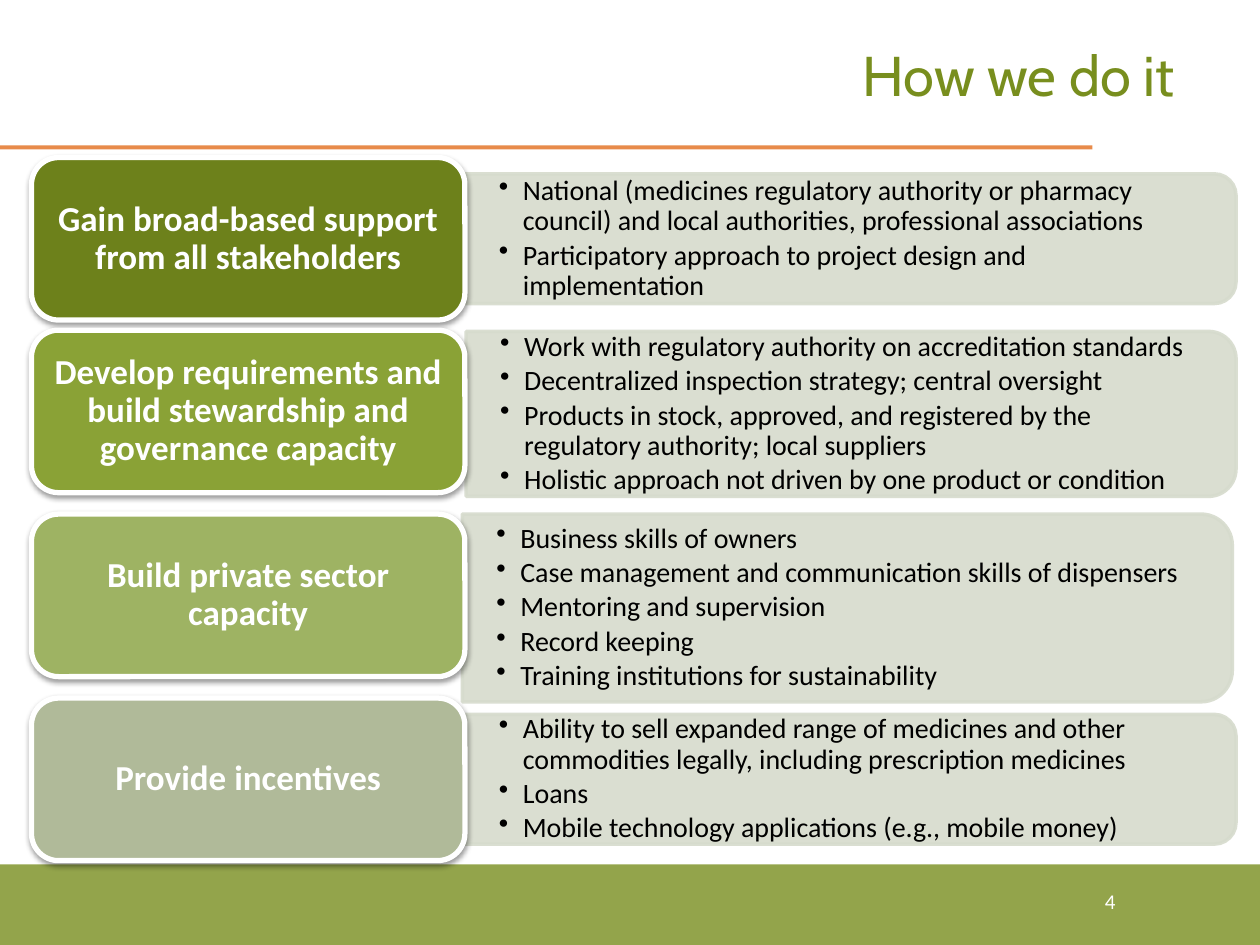
"""Builds the "How we do it" slide: four labelled steps with bullet panels."""
from lxml import etree
from pptx import Presentation
from pptx.dml.color import RGBColor
from pptx.enum.shapes import MSO_CONNECTOR, MSO_SHAPE
from pptx.enum.text import MSO_ANCHOR, PP_ALIGN
from pptx.oxml.ns import qn
from pptx.util import Inches, Pt

RECT, ROUND = MSO_SHAPE.RECTANGLE, MSO_SHAPE.ROUNDED_RECTANGLE
ROUND_TOP = MSO_SHAPE.ROUND_2_SAME_RECTANGLE
STRAIGHT = MSO_CONNECTOR.STRAIGHT
LEFT, CENTER, RIGHT = PP_ALIGN.LEFT, PP_ALIGN.CENTER, PP_ALIGN.RIGHT
MIDDLE = MSO_ANCHOR.MIDDLE

GREEN = RGBColor(0x78, 0x8E, 0x1E)
ORANGE = RGBColor(0xE3, 0x6F, 0x1E)
PANEL = RGBColor(0xD6, 0xDB, 0xCD)
WHITE = RGBColor(0xFF, 0xFF, 0xFF)
BLACK = RGBColor(0, 0, 0)

TITLE = "How we do it"
PAGE = "4"
STEPS = [
    {"label": "Gain broad-based support from all stakeholders",
     "color": RGBColor(0x6D, 0x81, 0x1B), "top": 1.25,
     "panel": (3.69, 1.38, 6.12, 1.03),
     "bullets": ["National (medicines regulatory authority or pharmacy council) "
                 "and local authorities, professional associations",
                 "Participatory approach to project design and implementation"]},
    {"label": "Develop requirements and build stewardship and governance capacity",
     "color": RGBColor(0x8A, 0xA2, 0x36), "top": 2.62,
     "panel": (3.7, 2.63, 6.11, 1.31),
     "bullets": ["Work with regulatory authority on accreditation standards",
                 "Decentralized inspection strategy; central oversight",
                 "Products in stock, approved, and registered by the "
                 "regulatory authority; local suppliers",
                 "Holistic approach not driven by one product or condition"]},
    {"label": "Build private sector capacity",
     "color": RGBColor(0x9E, 0xB3, 0x63), "top": 4.08,
     "panel": (3.67, 4.08, 6.11, 1.49),
     "bullets": ["Business skills of owners",
                 "Case management and communication skills of dispensers",
                 "Mentoring and supervision",
                 "Record keeping",
                 "Training institutions for sustainability"]},
    {"label": "Provide incentives",
     "color": RGBColor(0xB0, 0xBA, 0x99), "top": 5.54,
     "panel": (3.69, 5.67, 6.12, 1.03),
     "bullets": ["Ability to sell expanded range of medicines and other "
                 "commodities legally, including prescription medicines",
                 "Loans",
                 "Mobile technology applications (e.g., mobile money)"]},
]


def inches(*values):
    return [Inches(v) for v in values]


def set_alpha(props, percent):
    for color in props.iter(qn("a:srgbClr")):
        etree.SubElement(color, qn("a:alpha"), val=str(percent * 1000))


def add_shadow(sp):
    effects = sp._element.spPr.find(qn("a:effectLst"))
    shadow = etree.SubElement(effects, qn("a:outerShdw"), blurRad="40000",
                              dist="20000", dir="5400000", rotWithShape="0")
    color = etree.SubElement(shadow, qn("a:srgbClr"), val="000000")
    etree.SubElement(color, qn("a:alpha"), val="38000")


def add_shape(s, kind, box, fill, line=None, width=0):
    sp = s.shapes.add_shape(kind, *inches(*box))
    sp.shadow.inherit = False
    sp.fill.solid()
    sp.fill.fore_color.rgb = fill
    if line is None:
        sp.line.fill.background()
    else:
        sp.line.color.rgb = line
        sp.line.width = Pt(width)
    return sp


def add_panel(s, box):
    x, y, w, h = box
    turned = (x + (w - h) / 2, y + (h - w) / 2, h, w)
    sp = add_shape(s, ROUND_TOP, turned, PANEL, PANEL, 2)
    sp.rotation = 90
    set_alpha(sp._element.spPr, 90)


def write(sp, texts, size, color, font="Calibri", align=LEFT, bold=False,
          insets=(0.1, 0.05), spacing=None, after=0, bullet=False):
    tf = sp.text_frame
    tf.word_wrap = True
    tf.vertical_anchor = MIDDLE
    tf.margin_left = tf.margin_right = Inches(insets[0])
    tf.margin_top = tf.margin_bottom = Inches(insets[1])
    for i, text in enumerate(texts):
        p = tf.add_paragraph() if i else tf.paragraphs[0]
        if bullet:
            pPr = p._p.get_or_add_pPr()
            pPr.set("marL", str(Inches(0.19)))
            pPr.set("indent", str(-Inches(0.19)))
            etree.SubElement(pPr, qn("a:buChar"), char="•")
        p.alignment = align
        p.line_spacing = spacing
        p.space_after = Pt(after)
        r = p.add_run()
        r.text = text
        r.font.name = font
        r.font.size = Pt(size)
        r.font.bold = bold
        r.font.color.rgb = color


def add_text(s, box, texts, size, color, **style):
    write(s.shapes.add_textbox(*inches(*box)), texts, size, color, **style)


def add_step(s, step):
    x, y, w, h = step["panel"]
    add_panel(s, step["panel"])
    pad = h * 0.05
    add_text(s, (x, y + pad, w - pad, h - 2 * pad), step["bullets"], 16, BLACK,
             insets=(0.27, 0.14), spacing=0.9, after=2.4, bullet=True)
    sp = add_shape(s, ROUND, (0.25, step["top"], 3.44, 1.29),
                   step["color"], WHITE, 3)
    add_shadow(sp)
    write(sp, [step["label"]], 20, WHITE, align=CENTER, bold=True,
          insets=(0.08, 0.04), spacing=0.9, after=7)


def main():
    prs = Presentation()
    prs.slide_width, prs.slide_height = inches(10, 7.5)
    s = prs.slides.add_slide(prs.slide_layouts[6])

    band = add_shape(s, RECT, (0, 6.86, 10, 0.64), GREEN)
    set_alpha(band._element.spPr, 80)
    rule = s.shapes.add_connector(STRAIGHT, *inches(0, 1.17, 8.67, 1.17))
    rule.line.color.rgb = ORANGE
    rule.line.width = Pt(2.25)
    set_alpha(rule._element.spPr, 80)
    etree.SubElement(rule._element.spPr, qn("a:effectLst"))

    add_text(s, (0.67, 0.17, 8.75, 0.83), [TITLE], 32, GREEN,
             font="Cabin", align=RIGHT)
    for step in STEPS:
        add_step(s, step)
    add_text(s, (8.67, 6.95, 0.99, 0.4), [PAGE], 12, WHITE)
    prs.save("out.pptx")


if __name__ == "__main__":
    main()
